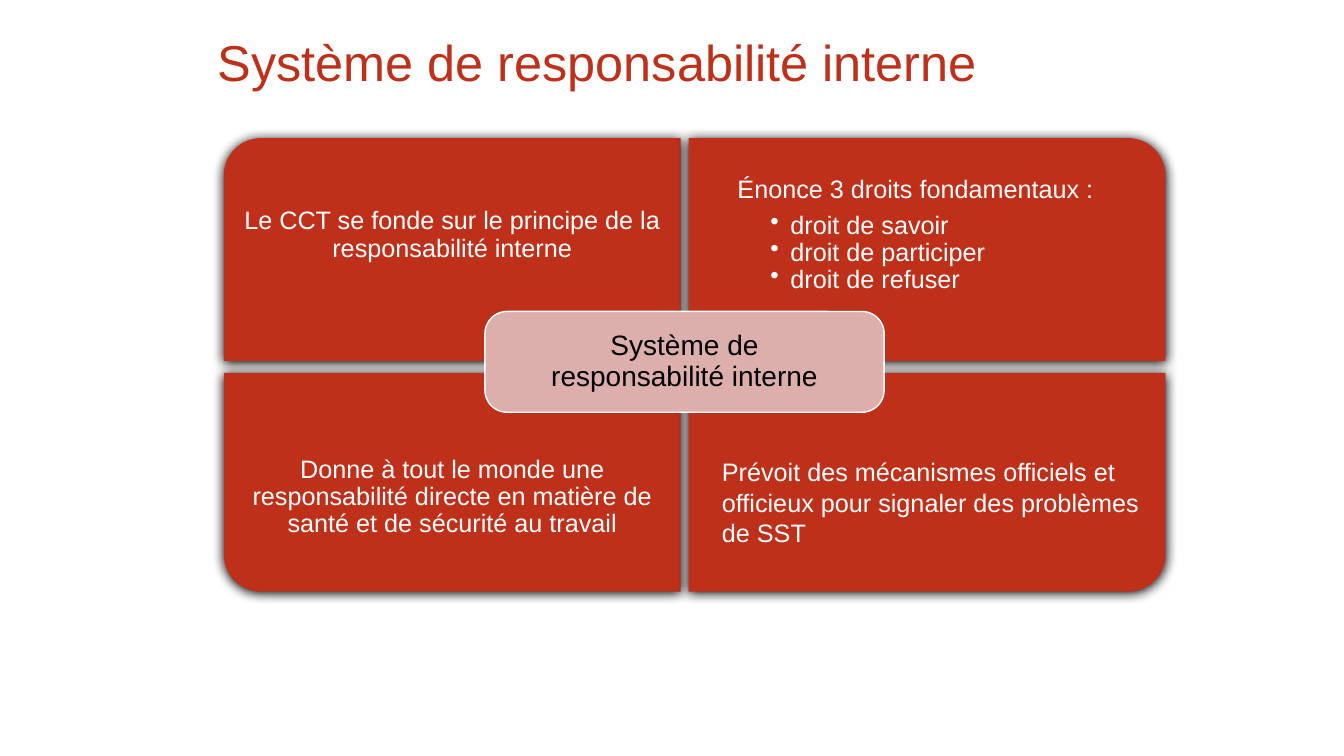
from dataclasses import dataclass
from math import cos, radians, sin

from lxml.etree import SubElement as Sub
from pptx import Presentation
from pptx.dml.color import RGBColor as Rgb
from pptx.enum.shapes import MSO_SHAPE as Kind
from pptx.enum.text import MSO_ANCHOR as Anchor, MSO_AUTO_SIZE as Fit, PP_ALIGN as Align
from pptx.oxml.ns import qn
from pptx.util import Inches, Pt

INK = {"red": "BF301A", "pink": "DCAEAC", "white": "FFFFFF", "black": "000000"}
FONT = "Arial"
TOPIC = "Système de responsabilité interne"
ROUND = 0.37  # corner radius of a panel
STEPS = 16  # segments in a corner arc


@dataclass
class Para:
    text: str
    align: Align = Align.CENTER
    left: float = 0
    hang: float = 0
    space: float = 0.9
    after: float = 0
    mark: str = ""


@dataclass
class Panel:
    col: int
    row: int
    turn: int  # rounded corner, clockwise from top left
    pad: tuple[float, float, float, float]
    paras: list[Para]


COLS = [(2.22, 4.53), (6.83, 4.73)]  # left, width
ROWS = [(1.37, 2.21), (3.7, 2.17)]  # top, height

RIGHTS = ["droit de savoir", "droit de participer", "droit de refuser"]
PANELS = [
    Panel(0, 0, 0, (0.2, 0.5, 0.2, 0.78),
          [Para("Le CCT se fonde sur le principe de la responsabilité interne")]),
    Panel(1, 0, 1, (0.12, 0.3, 0.44, 0.58),
          [Para("Énonce 3 droits fondamentaux :", left=0.49, hang=-0.4, after=6)]
          + [Para(right, Align.LEFT, 0.89, -0.2, mark="•") for right in RIGHTS]),
    Panel(0, 1, 3, (0.2, 0.8, 0.2, 0.5),
          [Para("Donne à tout le monde une responsabilité directe en matière "
                "de santé et de sécurité au travail")]),
    Panel(1, 1, 2, (0.04, 0.83, 0.12, 0.44),
          [Para("Prévoit des mécanismes officiels et officieux pour signaler "
                "des problèmes de SST", Align.LEFT, 0.29, space=1.0)]),
]


def tint(name: str) -> Rgb:
    return Rgb.from_string(INK[name])


def write(frame, paras: list[Para], size: int, ink: str, pad: tuple) -> None:
    frame.word_wrap = True
    frame.auto_size = Fit.NONE
    frame.vertical_anchor = Anchor.MIDDLE
    (frame.margin_left, frame.margin_top,
     frame.margin_right, frame.margin_bottom) = map(Inches, pad)
    for num, item in enumerate(paras):
        para = frame.add_paragraph() if num else frame.paragraphs[0]
        props = para._p.get_or_add_pPr()
        props.set("marL", str(Inches(item.left)))
        props.set("indent", str(Inches(item.hang)))
        if item.mark:
            Sub(props, qn("a:buChar")).set("char", item.mark)
        para.alignment = item.align
        para.line_spacing = item.space
        para.space_before = Pt(0)
        para.space_after = Pt(item.after)
        run = para.add_run()
        run.text = item.text
        run.font.name = FONT
        run.font.size = Pt(size)
        run.font.color.rgb = tint(ink)


def shade(shape) -> None:
    shape.shadow.inherit = False
    effects = shape._element.spPr.find(qn("a:effectLst"))
    cast = Sub(effects, qn("a:outerShdw"), blurRad=str(Pt(8.5)),
               dist=str(Pt(1)), dir="5400000", rotWithShape="0")
    Sub(cast, qn("a:srgbClr"), val=INK["black"])


def outline(left: float, top: float, wide: float, high: float,
            turn: int) -> list[tuple[int, int]]:
    spots = []
    for num, (x, y) in enumerate([(0, 0), (1, 0), (1, 1), (0, 1)]):
        px, py = left + x * wide, top + y * high
        if num != turn:
            spots.append((px, py))
            continue
        cx, cy = px + ROUND * (1 - 2 * x), py + ROUND * (1 - 2 * y)
        for step in range(STEPS + 1):
            angle = radians(180 + 90 * (num + step / STEPS))
            spots.append((cx + ROUND * cos(angle), cy + ROUND * sin(angle)))
    return [(Inches(x), Inches(y)) for x, y in spots]


def draw(slide, panel: Panel) -> None:
    left, wide = COLS[panel.col]
    top, high = ROWS[panel.row]
    spots = outline(left, top, wide, high, panel.turn)
    path = slide.shapes.build_freeform(*spots[0])
    path.add_line_segments(spots[1:], close=True)
    shape = path.convert_to_shape()
    shape.fill.solid()
    shape.fill.fore_color.rgb = tint("red")
    shape.line.fill.background()
    shade(shape)
    write(shape.text_frame, panel.paras, 18, "white", panel.pad)


def main() -> None:
    deck = Presentation()
    deck.slide_width, deck.slide_height = Inches(13.33), Inches(7.5)
    slide = deck.slides.add_slide(deck.slide_layouts[5])

    # Title
    title = slide.shapes.title
    title.left, title.top = Inches(2.06), Inches(0.35)
    title.width, title.height = Inches(9.13), Inches(0.59)
    write(title.text_frame, [Para(TOPIC, Align.LEFT)], 36, "red",
          (0.1, 0.05, 0.1, 0.05))

    # Four panels
    for panel in PANELS:
        draw(slide, panel)

    # Centre label
    label = slide.shapes.add_shape(Kind.ROUNDED_RECTANGLE, Inches(4.81),
                                   Inches(3.09), Inches(3.96), Inches(1))
    label.adjustments[0] = 0.22
    label.shadow.inherit = False
    label.fill.solid()
    label.fill.fore_color.rgb = tint("pink")
    label.line.color.rgb = tint("white")
    label.line.width = Pt(1)
    write(label.text_frame, [Para(TOPIC)], 20, "black", (0.29, 0.1, 0.29, 0.1))

    deck.save("out.pptx")


if __name__ == "__main__":
    main()
